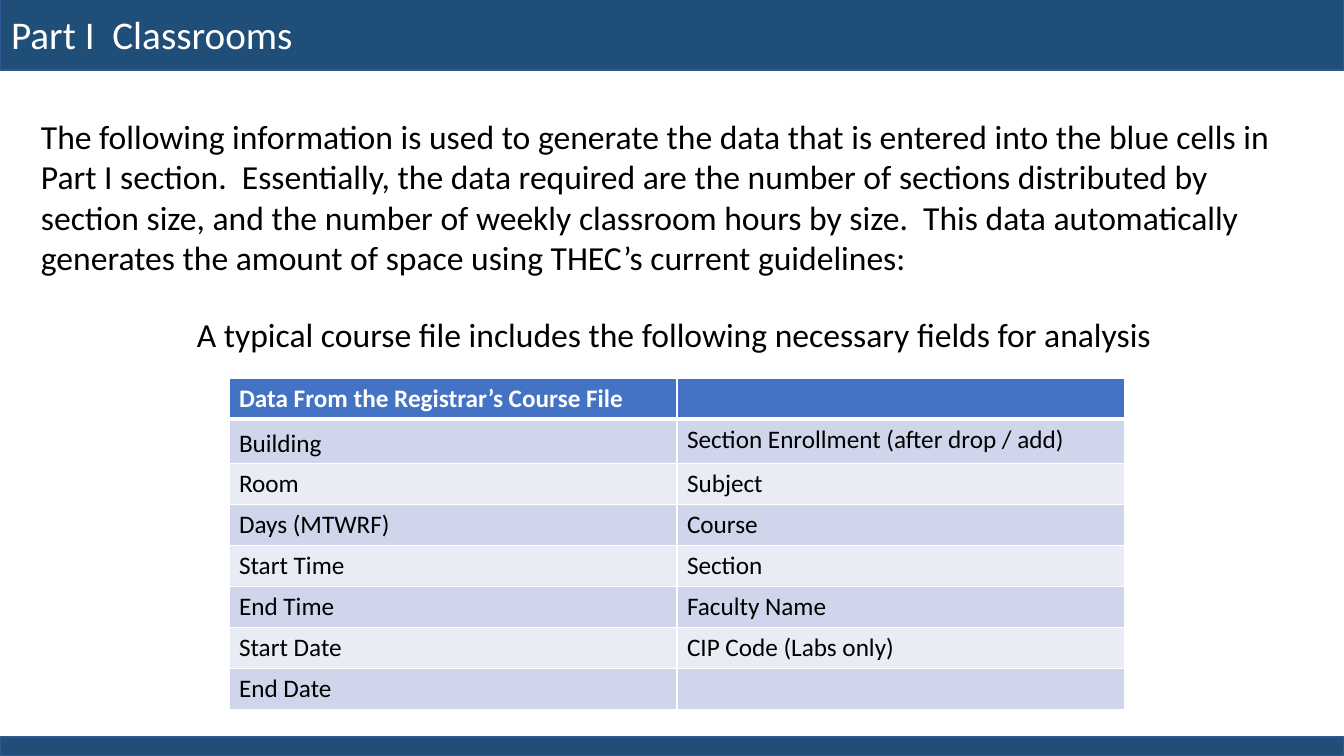
from dataclasses import dataclass

from lxml import etree
from pptx import Presentation
from pptx import util as u
from pptx.dml.color import RGBColor
from pptx.enum import shapes, text
from pptx.oxml import ns

SCALE = 914400 / 100.8  # EMU in one px
FONT = "Calibri"
HUES = {
    "bar": "1F4E79", "edge": "325491", "head": "4472C4",
    "odd": "CFD5EA", "even": "E9EBF5", "white": "FFFFFF", "black": "000000",
}
INTRO = (
    "The following information is used to generate the data that is entered "
    "into the blue cells in Part I section.  Essentially, the data required "
    "are the number of sections distributed by section size, and the number "
    "of weekly classroom hours by size.  This data automatically generates "
    "the amount of space using THEC’s current guidelines:"
)
FIELDS = [
    ("Data From the Registrar’s Course File", ""),
    ("Building", "Section Enrollment (after drop / add)"),
    ("Room", "Subject"),
    ("Days (MTWRF)", "Course"),
    ("Start Time", "Section"),
    ("End Time", "Faculty Name"),
    ("Start Date", "CIP Code (Labs only)"),
    ("End Date", ""),
]
COL, ROW = 448, 41


@dataclass
class Box:
    left: int
    top: int
    width: int
    height: int

    def emu(self) -> list[int]:
        return [px(n) for n in (self.left, self.top, self.width, self.height)]


@dataclass
class Note:
    box: Box
    words: str
    align: text.PP_ALIGN


BARS = [Box(0, -3, 1344, 73), Box(0, 737, 1344, 19)]
NOTES = [
    Note(Box(31, 111, 1291, 172), INTRO, text.PP_ALIGN.LEFT),
    Note(Box(114, 309, 1120, 50),
         "A typical course file includes the following necessary fields for analysis",
         text.PP_ALIGN.CENTER),
]


def px(n: int) -> int:
    return round(n * SCALE)


def hue(name: str) -> RGBColor:
    return RGBColor.from_string(HUES[name])


def write(frame, words: str, *, size: int, color: str = "black", bold: bool = False,
          align=text.PP_ALIGN.LEFT, space: float = 1.0) -> None:
    para = frame.paragraphs[0]
    para.alignment = align
    para.line_spacing = space
    font = para.font
    if words:
        run = para.add_run()
        run.text = words
        font = run.font
    font.name, font.size, font.bold = FONT, u.Pt(size), bold
    font.color.rgb = hue(color)


def draw_bar(slide, box: Box) -> None:
    bar = slide.shapes.add_shape(shapes.MSO_SHAPE.RECTANGLE, *box.emu())
    bar.shadow.inherit = False
    bar.fill.solid()
    bar.fill.fore_color.rgb = hue("bar")
    bar.line.color.rgb = hue("edge")
    bar.line.width = u.Pt(1)


def draw_title(slide, box: Box, words: str) -> None:
    title = slide.shapes.title
    title.left, title.top, title.width, title.height = box.emu()
    frame = title.text_frame
    frame.word_wrap = False
    frame.auto_size = text.MSO_AUTO_SIZE.NONE
    frame.vertical_anchor = text.MSO_ANCHOR.TOP
    write(frame, words, size=28, color="white")
    slide.shapes._spTree.append(title._element)  # in front of the bars


def draw_note(slide, note: Note) -> None:
    frame = slide.shapes.add_textbox(*note.box.emu()).text_frame
    frame.word_wrap = True
    write(frame, note.words, size=24, align=note.align)


def rule_cell(cell, top: int, bottom: int) -> None:
    props = cell._tc.get_or_add_tcPr()
    for side, width in (("L", 1), ("R", 1), ("T", top), ("B", bottom)):
        line = etree.SubElement(props, ns.qn(f"a:ln{side}"), w=str(u.Pt(width)))
        fill = etree.SubElement(line, ns.qn("a:solidFill"))
        etree.SubElement(fill, ns.qn("a:srgbClr"), val=HUES["white"])


def draw_table(slide, left: int, top: int) -> None:
    box = Box(left, top, 2 * COL, ROW * len(FIELDS))
    table = slide.shapes.add_table(len(FIELDS), 2, *box.emu()).table
    for col in table.columns:
        col.width = px(COL)
    for r, pair in enumerate(FIELDS):
        table.rows[r].height = px(ROW)
        head = r == 0
        shade = "head" if head else "odd" if r % 2 else "even"
        for c, words in enumerate(pair):
            cell = table.cell(r, c)
            rule_cell(cell, top=3 if r == 1 else 1, bottom=3 if head else 1)
            cell.fill.solid()
            cell.fill.fore_color.rgb = hue(shade)
            write(cell.text_frame, words, size=18, bold=head,
                  color="white" if head else "black",
                  space=1.15 if words == "Building" else 1.0)


def main() -> None:
    deck = Presentation()
    deck.slide_width, deck.slide_height = px(1344), px(756)
    slide = deck.slides.add_slide(deck.slide_layouts.get_by_name("Title Only"))

    # Bars and title
    for bar in BARS:
        draw_bar(slide, bar)
    draw_title(slide, Box(1, 5, 305, 57), "Part I  Classrooms")

    # Body text
    for note in NOTES:
        draw_note(slide, note)

    # Course file fields
    draw_table(slide, 229, 378)

    deck.save("out.pptx")


if __name__ == "__main__":
    main()
